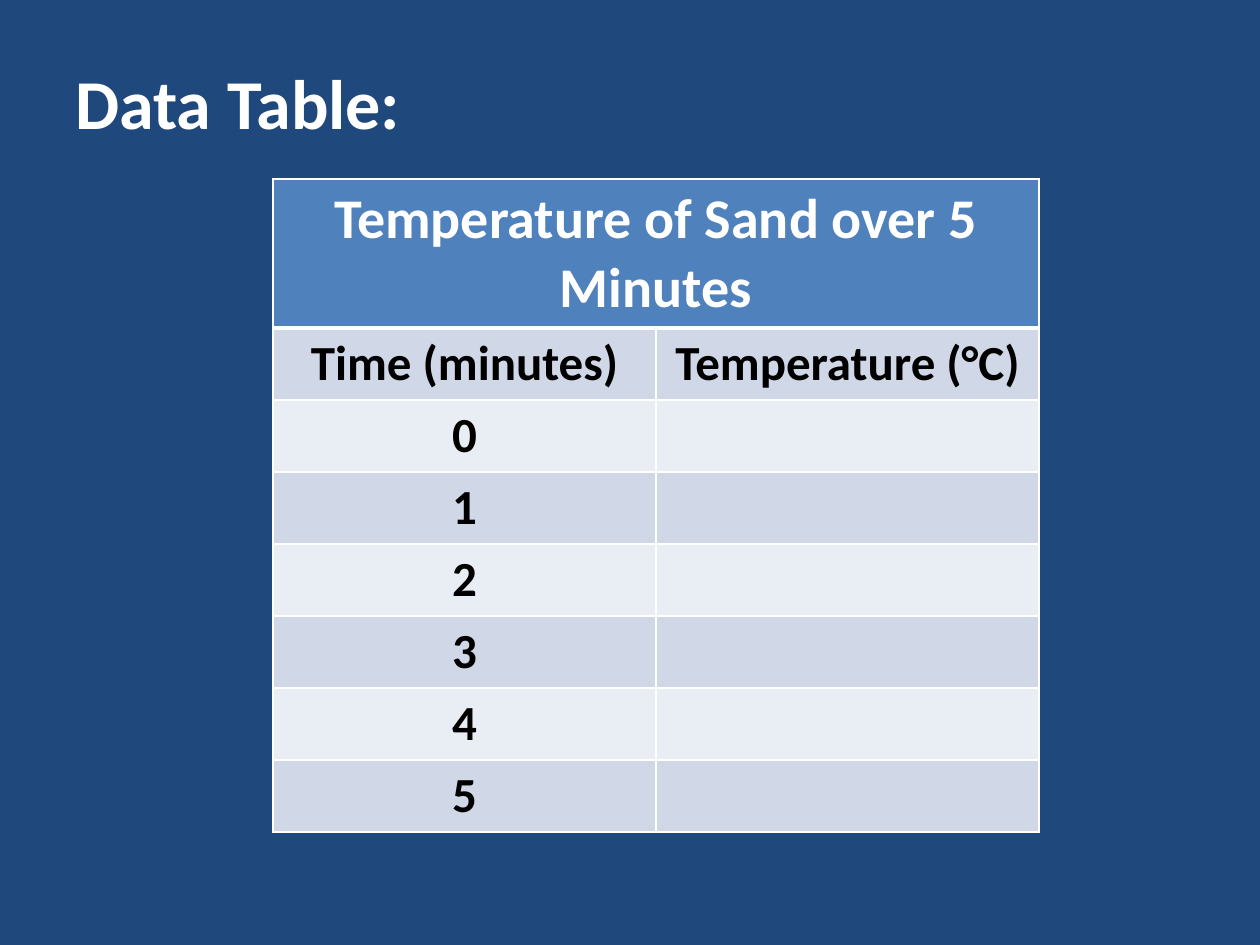
from lxml import etree
from pptx import Presentation
from pptx import util as u
from pptx.dml.color import RGBColor
from pptx.enum import text
from pptx.oxml.ns import qn

SCALE = 914400 // 126  # EMU per px
WHITE, BLACK, NAVY, BLUE = "FFFFFF", "000000", "1F497D", "4F81BD"
BANDS = ["D0D8E8", "E9EDF4"]


def px(n):
    return u.Emu(n * SCALE)


def color(code):
    return RGBColor.from_string(code)


def style(frame, size, tint):
    """Format every run in bold Calibri."""
    for para in frame.paragraphs:
        for run in para.runs:
            font = run.font
            font.name, font.size, font.bold = "Calibri", u.Pt(size), True
            font.color.rgb = color(tint)


def border(cell, base=1):
    """White cell edges; base is the width of the lower one in points."""
    props = cell._tc.get_or_add_tcPr()
    for side, width in zip("LRTB", (1, 1, 1, base)):
        line = etree.SubElement(props, qn(f"a:ln{side}"), w=str(u.Pt(width)))
        fill = etree.SubElement(line, qn("a:solidFill"))
        etree.SubElement(fill, qn("a:srgbClr"), val=WHITE)


def fill_cell(cell, words, size, tint, back, base=1):
    border(cell, base)
    cell.fill.solid()
    cell.fill.fore_color.rgb = color(back)
    cell.text_frame.text = words
    cell.text_frame.paragraphs[0].alignment = text.PP_ALIGN.CENTER
    style(cell.text_frame, size, tint)


def add_title(slide, words):
    frame = slide.shapes.add_textbox(px(63), px(53), px(1134), px(791)).text_frame
    frame.word_wrap = True
    frame.text = words
    frame.paragraphs[0].space_before = u.Pt(2)
    style(frame, 40, WHITE)


def add_grid(slide, head, rows):
    head_h, row_h = 149, 72
    count = len(rows) + 1
    table = slide.shapes.add_table(
        count, 2, px(273), px(179), px(766), px(head_h + row_h * len(rows))
    ).table
    for row in table.rows:
        row.height = px(row_h)
    table.rows[0].height = px(head_h)

    # Heading across both columns
    table.cell(0, 0).merge(table.cell(0, 1))
    for col, words in enumerate((head, "")):
        fill_cell(table.cell(0, col), words, 32, WHITE, BLUE, base=3)

    # Banded rows
    for i, row in enumerate(rows):
        for col, words in enumerate(row):
            fill_cell(table.cell(i + 1, col), words, 28, BLACK, BANDS[i % 2])


def main():
    prs = Presentation()
    prs.slide_width, prs.slide_height = px(1260), px(945)
    slide = prs.slides.add_slide(prs.slide_layouts[6])
    slide.background.fill.solid()
    slide.background.fill.fore_color.rgb = color(NAVY)

    add_title(slide, "Data Table:")
    rows = [("Time (minutes)", "Temperature (°C)")]
    rows += [(str(minute), "") for minute in range(6)]
    add_grid(slide, "Temperature of Sand over 5 Minutes", rows)
    prs.save("out.pptx")


if __name__ == "__main__":
    main()
